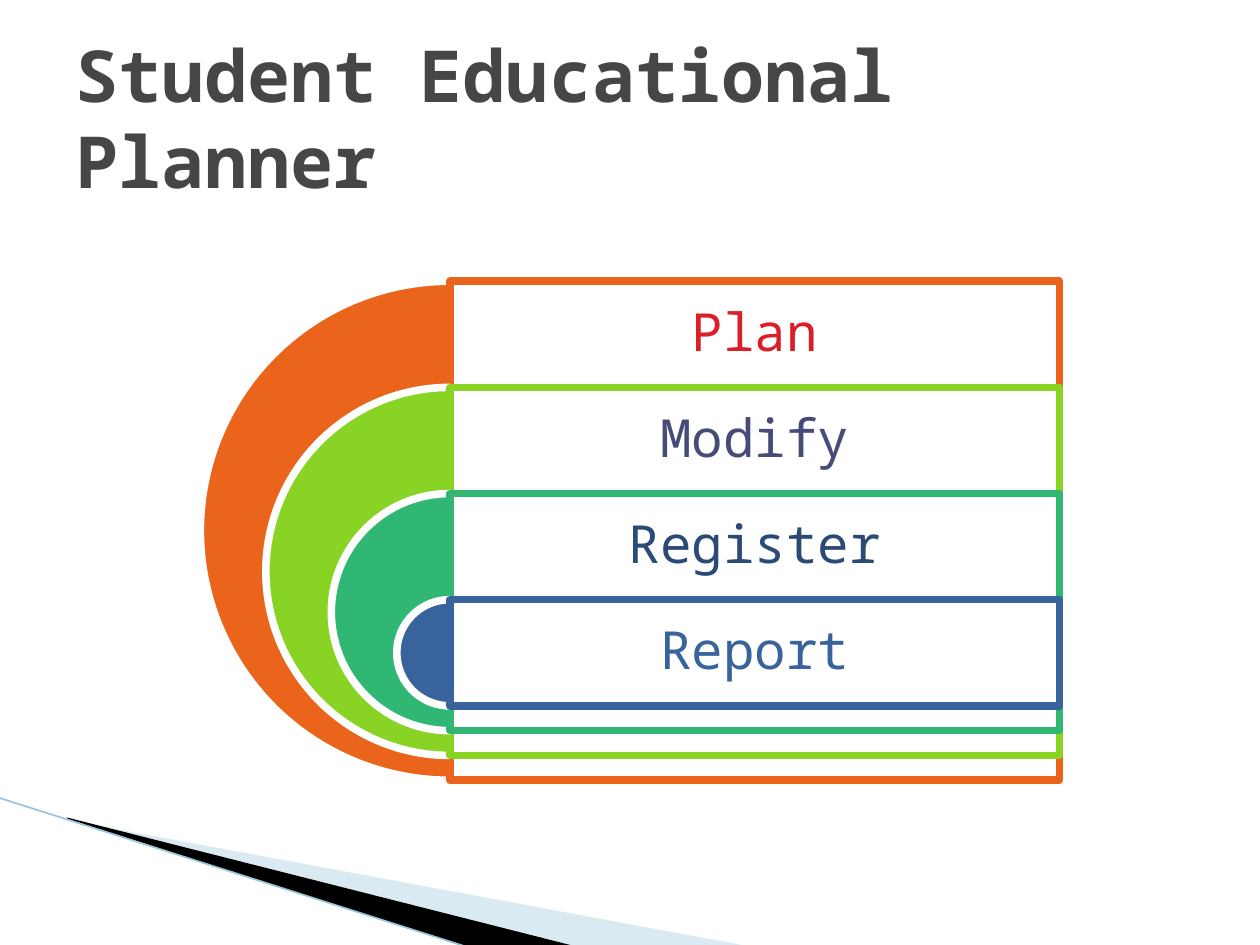
from lxml import etree
from pptx import Presentation
from pptx import util as u
from pptx.dml.color import RGBColor
from pptx.enum import shapes, text
from pptx.oxml.ns import qn

WHITE = RGBColor(0xFF, 0xFF, 0xFF)
BLACK = RGBColor(0x00, 0x00, 0x00)
GREY = RGBColor(0x46, 0x46, 0x46)
PALE_BLUE = RGBColor(0xA0, 0xCB, 0xDC)
EDGE_BLUE = RGBColor(0x97, 0xC5, 0xD8)
ORANGE = RGBColor(0xEB, 0x64, 0x1B)
LIME = RGBColor(0x88, 0xD3, 0x23)
GREEN = RGBColor(0x2F, 0xB7, 0x73)
BLUE = RGBColor(0x39, 0x63, 0x9D)
RED = RGBColor(0xDA, 0x1F, 0x28)
VIOLET = RGBColor(0x47, 0x4B, 0x78)
NAVY = RGBColor(0x2B, 0x4A, 0x76)
FONT = "Noto Sans Mono"


def paint(shape, fill, opacity=100, line=None):
    shape.shadow.inherit = False
    shape.fill.solid()
    shape.fill.fore_color.rgb = fill
    if opacity < 100:
        color = shape.fill._xPr.find(qn("a:solidFill"))[0]
        etree.SubElement(color, qn("a:alpha"), val=str(opacity * 1000))
    if line is None:
        shape.line.fill.background()
    else:
        shape.line.color.rgb = line
        shape.line.width = u.Pt(4.33)


def write(frame, words, color, frame_format, font_format):
    for name, value in frame_format.items():
        setattr(frame, name, value)
    para = frame.paragraphs[0]
    span = para.add_run()
    span.text = words
    for name, value in font_format.items():
        setattr(span.font, name, value)
    span.font.color.rgb = color
    return para


deck = Presentation()
deck.slide_width, deck.slide_height = u.Cm(25.4), u.Cm(19.05)
page = deck.slides.add_slide(deck.slide_layouts[5])

# Corner wedges, in centimetres
wedges = [
    ([(1.4, 16.54), (15.11, 19.08), (11.58, 19.08), (1.4, 16.51)], PALE_BLUE, 40),
    ([(1.35, 16.48), (11.61, 19.08), (9.45, 19.1), (1.37, 16.51)], BLACK, 100),
]
for points, color, opacity in wedges:
    corners = [(u.Cm(x), u.Cm(y)) for x, y in points]
    outline = page.shapes.build_freeform(*corners[0])
    outline.add_line_segments(corners[1:], close=True)
    paint(outline.convert_to_shape(), color, opacity)

# Thin edge of the wedges
edge = page.shapes.add_connector(
    shapes.MSO_CONNECTOR.STRAIGHT, u.Cm(-0.03), u.Cm(16.08), u.Cm(9.45), u.Cm(19.1))
edge.line.color.rgb = EDGE_BLUE
edge.line.width = u.Pt(0.95)
etree.SubElement(edge._element.spPr, qn("a:effectLst"))

# Title
title = page.shapes.title
title.left, title.top, title.width, title.height = (
    u.Cm(1.27), u.Cm(0.76), u.Cm(22.86), u.Cm(3.18))
title_frame = {"auto_size": text.MSO_AUTO_SIZE.NONE, "word_wrap": True,
               "vertical_anchor": text.MSO_ANCHOR.MIDDLE}
title_font = {"name": FONT, "size": u.Pt(41), "bold": True}
heading = write(title.text_frame, "Student Educational Planner", GREY,
                title_frame, title_font)
heading.alignment = text.PP_ALIGN.LEFT

# Nested half discs, each with a framed panel and a label
CENTER, TOP, STEP = 9.07, 5.67, 2.14
DIAMETER, SHRINK = 10.06, 2.64
PANEL_WIDTH, LABEL_HEIGHT = 12.29, 2.14
label_frame = {"word_wrap": True, "vertical_anchor": text.MSO_ANCHOR.MIDDLE}
label_frame.update({f"margin_{side}": u.Cm(0.3)
                    for side in ("left", "top", "right", "bottom")})
label_font = {"name": FONT, "size": u.Pt(30)}
stages = [("Plan", ORANGE, RED), ("Modify", LIME, VIOLET),
          ("Register", GREEN, NAVY), ("Report", BLUE, BLUE)]

for i, (words, color, text_color) in enumerate(stages):
    top = u.Cm(TOP + i * STEP)
    size = DIAMETER - i * SHRINK

    disc = page.shapes.add_shape(
        shapes.MSO_SHAPE.PIE, u.Cm(CENTER - size / 2), top, u.Cm(size), u.Cm(size))
    disc.adjustments[0], disc.adjustments[1] = 54, 162  # 90 to 270 degrees
    paint(disc, color, line=WHITE)

    panel = page.shapes.add_shape(
        shapes.MSO_SHAPE.RECTANGLE, u.Cm(CENTER), top, u.Cm(PANEL_WIDTH), u.Cm(size))
    paint(panel, WHITE, 90, color)

    label = page.shapes.add_textbox(
        u.Cm(CENTER), top, u.Cm(PANEL_WIDTH), u.Cm(LABEL_HEIGHT))
    para = write(label.text_frame, words, text_color, label_frame, label_font)
    para.alignment = text.PP_ALIGN.CENTER
    para.line_spacing = 0.9

deck.save("out.pptx")
